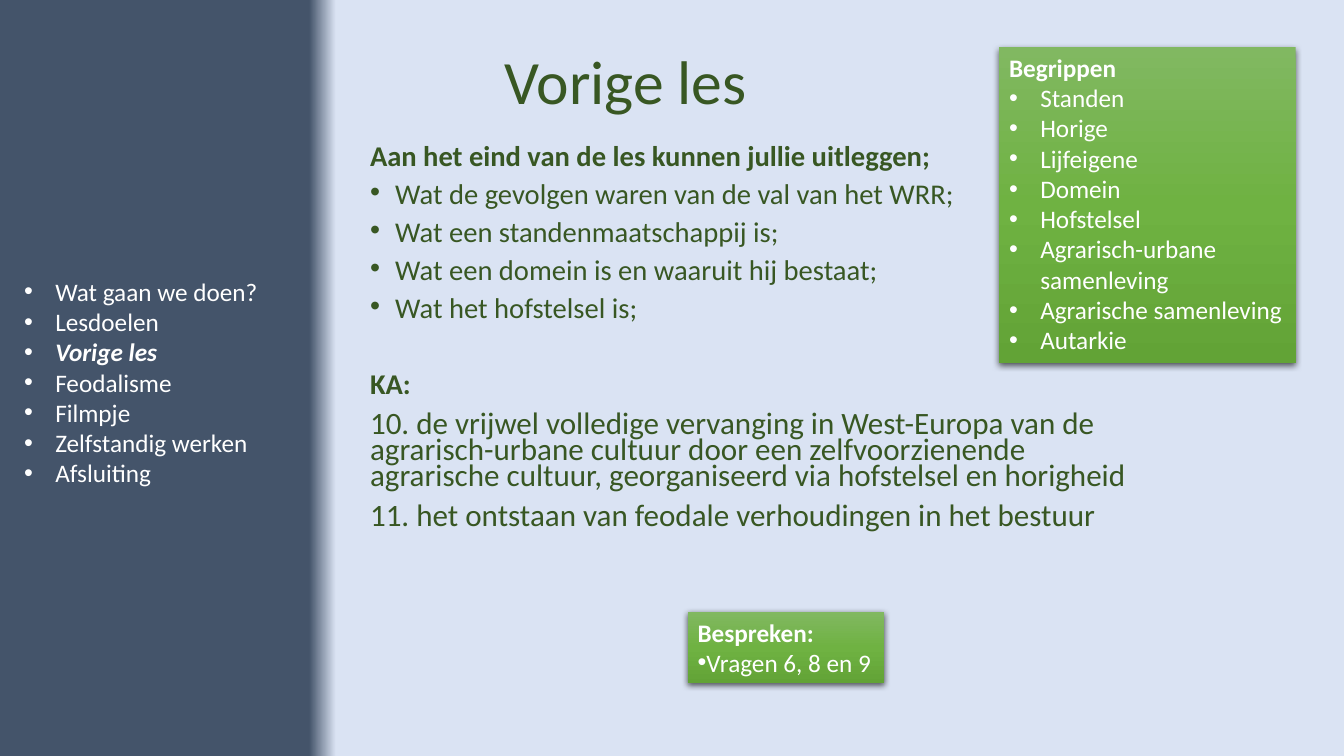
import copy
from dataclasses import dataclass

import pptx
import pptx.dml.color
import pptx.enum.shapes
import pptx.enum.text
import pptx.oxml
import pptx.oxml.ns
import pptx.util
from pptx.util import Inches

COLORS = {
    "navy": "44546A",
    "pale": "DAE3F3",
    "green_text": "385723",
    "white": "FFFFFF",
    "green_top": "81B861",
    "green_mid": "6FB242",
    "green_bottom": "62A336",
    "shadow": "000000",
}
FONT = "Calibri"


@dataclass
class Line:
    text: str
    bold: bool = False
    italic: bool = False
    bullet: bool = False
    indent: float = 0
    size: float = 18
    before: float = 0
    spacing: float = 1.0


@dataclass
class Box:
    left: float
    top: float
    width: float
    height: float
    lines: list[Line]
    filled: bool = True


def rgb(name: str) -> pptx.dml.color.RGBColor:
    return pptx.dml.color.RGBColor.from_string(COLORS[name])


def bullets(*texts: str, current: str = "") -> list[Line]:
    return [Line(t, t == current, t == current, True, 0.31) for t in texts]


def goal(text: str, **options) -> Line:
    return Line(text, **{"size": 20.4, "before": 10, "spacing": 0.7, **options})


def place(sp, left: float, top: float, width: float, height: float) -> None:
    sp.left, sp.top = Inches(left), Inches(top)
    sp.width, sp.height = Inches(width), Inches(height)


def add_xml(parent, tag: str, inner: str = "", **attrs: str) -> None:
    attributes = " ".join(f'{k}="{v}"' for k, v in attrs.items())
    ns = pptx.oxml.ns.nsdecls("a")
    parent.append(pptx.oxml.parse_xml(f"<a:{tag} {ns} {attributes}>{inner}</a:{tag}>"))


def write_lines(tf, lines: list[Line], color: str) -> None:
    for i, line in enumerate(lines):
        p = tf.paragraphs[0] if i == 0 else tf.add_paragraph()
        p.alignment = pptx.enum.text.PP_ALIGN.LEFT
        p.line_spacing = line.spacing
        p.space_before = pptx.util.Pt(line.before)
        pPr = p._p.get_or_add_pPr()
        pPr.set("marL", str(Inches(line.indent)))
        pPr.set("indent", str(-Inches(line.indent)))
        if line.bullet:
            add_xml(pPr, "buFont", typeface="Arial")
            add_xml(pPr, "buChar", char="•")
        else:
            add_xml(pPr, "buNone")
        for j, part in enumerate(line.text.split("\n")):
            if j:
                p.add_line_break()
            r = p.add_run()
            r.text = part
            r.font.name = FONT
            r.font.size = pptx.util.Pt(line.size)
            r.font.bold, r.font.italic = line.bold, line.italic
            r.font.color.rgb = rgb(color)


def set_gradient(fill, first: str, last: str, angle: float) -> None:
    fill.gradient()
    fill.gradient_angle = angle
    for stop, name in zip(fill.gradient_stops, (first, last)):
        stop.color.rgb = rgb(name)


def style_card(sp) -> None:
    set_gradient(sp.fill, "green_top", "green_bottom", 270)
    stops = sp.element.spPr.find(".//" + pptx.oxml.ns.qn("a:gsLst"))
    stops.insert(1, copy.deepcopy(stops[0]))
    for stop, position, name in zip(
        sp.fill.gradient_stops, (0, 0.5, 1), ("green_top", "green_mid", "green_bottom")
    ):
        stop.position = position
        stop.color.rgb = rgb(name)
    sp.line.fill.background()
    shadow = (
        '<a:outerShdw blurRad="57150" dist="19050" dir="5400000" algn="ctr" rotWithShape="0">'
        f'<a:srgbClr val="{COLORS["shadow"]}"><a:alpha val="63000"/></a:srgbClr></a:outerShdw>'
    )
    add_xml(sp.element.spPr, "effectLst", shadow)


def add_box(s, box: Box) -> None:
    frame = [Inches(v) for v in (box.left, box.top, box.width, box.height)]
    if box.filled:
        sp = s.shapes.add_shape(pptx.enum.shapes.MSO_SHAPE.RECTANGLE, *frame)
        style_card(sp)
    else:
        sp = s.shapes.add_textbox(*frame)
    tf = sp.text_frame
    tf.word_wrap = False
    tf.auto_size = pptx.enum.text.MSO_AUTO_SIZE.SHAPE_TO_FIT_TEXT
    tf.vertical_anchor = pptx.enum.text.MSO_ANCHOR.TOP
    write_lines(tf, box.lines, "white")


GOALS = [
    goal("Aan het eind van de les kunnen jullie uitleggen;", bold=True),
    *(
        goal(text, bullet=True, indent=0.25)
        for text in (
            "Wat de gevolgen waren van de val van het WRR;",
            "Wat een standenmaatschappij is;",
            "Wat een domein is en waaruit hij bestaat;",
            "Wat het hofstelsel is;",
        )
    ),
    goal("KA:", bold=True, before=37.4),
    goal(
        "10. de vrijwel volledige vervanging in West-Europa van de agrarisch-urbane "
        "cultuur door een zelfvoorzienende agrarische cultuur, georganiseerd via "
        "hofstelsel en horigheid",
        size=22.2,
    ),
    goal("11. het ontstaan van feodale verhoudingen in het bestuur", size=22.2),
]

BOXES = [
    Box(0.14, 2.69, 2.55, 2.22, bullets(
        "Wat gaan we doen?", "Lesdoelen", "Vorige les", "Feodalisme", "Filmpje",
        "Zelfstandig werken", "Afsluiting", current="Vorige les",
    ), filled=False),
    Box(6.82, 6.07, 1.95, 0.71, [
        Line("Bespreken:", bold=True),
        Line("Vragen 6, 8 en 9", bullet=True),
    ]),
    Box(9.91, 0.47, 2.94, 3.13, [
        Line("Begrippen", bold=True),
        *bullets(
            "Standen", "Horige", "Lijfeigene", "Domein", "Hofstelsel",
            "Agrarisch-urbane\nsamenleving", "Agrarische samenleving", "Autarkie",
        ),
    ]),
]


def main() -> None:
    prs = pptx.Presentation()
    prs.slide_width, prs.slide_height = Inches(13.33), Inches(7.5)
    s = prs.slides.add_slide(prs.slide_layouts[1])

    background = s.background.fill
    set_gradient(background, "navy", "pale", 0)
    for stop, position in zip(background.gradient_stops, (0.23, 0.25)):
        stop.position = position

    title, body = s.shapes.title, s.placeholders[1]
    place(title, 4.9, 0.17, 7.72, 1.34)
    write_lines(title.text_frame, [Line("Vorige les", size=44, spacing=0.9)], "green_text")
    title.text_frame.vertical_anchor = pptx.enum.text.MSO_ANCHOR.MIDDLE

    place(body, 3.57, 1.41, 7.91, 4.78)
    body.text_frame.auto_size = pptx.enum.text.MSO_AUTO_SIZE.NONE
    write_lines(body.text_frame, GOALS, "green_text")

    for box in BOXES:
        add_box(s, box)
    prs.save("out.pptx")


if __name__ == "__main__":
    main()
